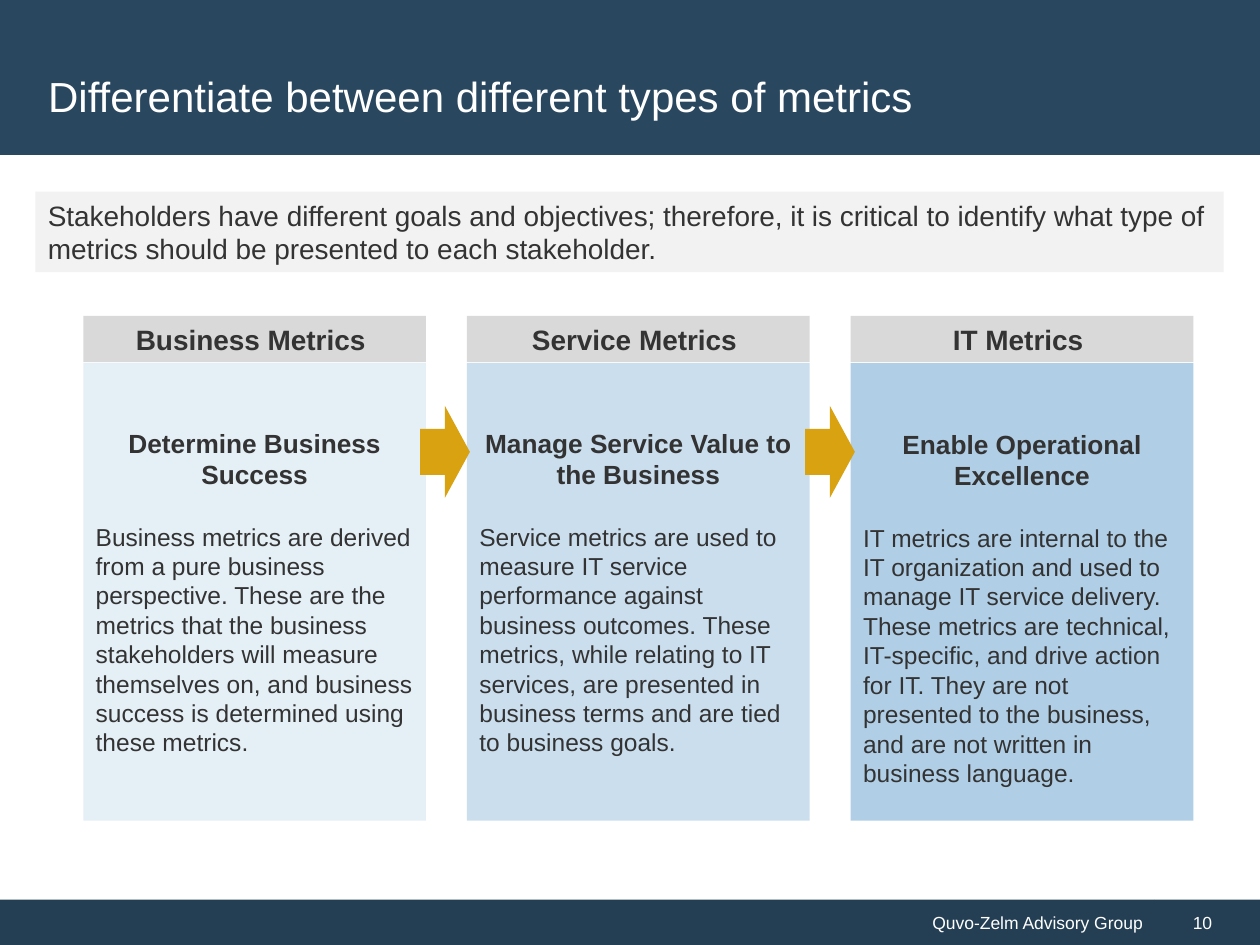
"""Build a slide that tells business, service and IT metrics apart."""
from pptx import Presentation
from pptx.dml.color import RGBColor
from pptx.enum import shapes, text
from pptx.util import Pt

NAVY = RGBColor(0x29, 0x47, 0x5F)
DARK_NAVY = RGBColor(0x24, 0x3F, 0x54)
WHITE = RGBColor(0xFF, 0xFF, 0xFF)
INK = RGBColor(0x33, 0x33, 0x33)
GOLD = RGBColor(0xD9, 0xA2, 0x10)
PALE_GREY = RGBColor(0xF2, 0xF2, 0xF2)
GREY = RGBColor(0xD9, 0xD9, 0xD9)
ICE_BLUE = RGBColor(0xE5, 0xEF, 0xF6)
LIGHT_BLUE = RGBColor(0xCB, 0xDE, 0xEE)
SKY_BLUE = RGBColor(0xB0, 0xCE, 0xE5)

LEFT, ALIGN_CENTER, RIGHT = text.PP_ALIGN.LEFT, text.PP_ALIGN.CENTER, text.PP_ALIGN.RIGHT
RECTANGLE, ARROW = shapes.MSO_SHAPE.RECTANGLE, shapes.MSO_SHAPE.RIGHT_ARROW

COLUMNS = [
    ("Business Metrics ", ICE_BLUE, 3.6, "Determine Business Success",
     "Business metrics are derived from a pure business perspective. These are the metrics "
     "that the business stakeholders will measure themselves on, and business success is "
     "determined using these metrics."),
    ("Service Metrics ", LIGHT_BLUE, 3.6, "Manage Service Value to the Business",
     "Service metrics are used to measure IT service performance against business outcomes. "
     "These metrics, while relating to IT services, are presented in business terms and are "
     "tied to business goals."),
    ("IT Metrics ", SKY_BLUE, 21.6, "Enable Operational Excellence",
     "IT metrics are internal to the IT organization and used to manage IT service delivery. "
     "These metrics are technical, IT-specific, and drive action for IT. They are not presented "
     "to the business, and are not written in business language."),
]
CARD_LEFT, CARD_WIDTH, CARD_PITCH = 47.6, 195.8, 219.25


def add_block(left, top, width, height, fill, kind=RECTANGLE):
    block = slide.shapes.add_shape(kind, Pt(left), Pt(top), Pt(width), Pt(height))
    block.fill.solid()
    block.fill.fore_color.rgb = fill
    block.line.fill.background()
    block.shadow.inherit = False
    block.text_frame.word_wrap = True
    block.text_frame.vertical_anchor = text.MSO_ANCHOR.MIDDLE
    return block


def write(paragraph, words, size, color=INK, align=LEFT, bold=False):
    paragraph.text = words
    paragraph.alignment = align
    paragraph.font.name = "Arial"
    paragraph.font.size = Pt(size)
    paragraph.font.bold = bold
    paragraph.font.color.rgb = color


presentation = Presentation()
presentation.slide_width, presentation.slide_height = Pt(720), Pt(540)
slide = presentation.slides.add_slide(presentation.slide_layouts[5])

footer = add_block(0, 514, 660, 26, DARK_NAVY).text_frame
write(footer.paragraphs[0], "Quvo-Zelm Advisory Group", 10, WHITE, RIGHT)
page_number = add_block(660, 514, 60, 26, DARK_NAVY).text_frame
page_number.margin_left = Pt(21.6)
write(page_number.paragraphs[0], "10", 10, WHITE)

title = slide.shapes.title
title.left, title.top, title.width, title.height = Pt(20.3), Pt(20.3), Pt(679), Pt(69)
title.text_frame.vertical_anchor = text.MSO_ANCHOR.MIDDLE
write(title.text_frame.paragraphs[0], "Differentiate between different types of metrics", 24, WHITE)
banner = add_block(0, 0, 720, 88.5, NAVY)
title.element.addprevious(banner.element)

for index, (metric, tint, top_margin, goal, description) in enumerate(COLUMNS):
    left = CARD_LEFT + index * CARD_PITCH
    card = add_block(left, 207.5, CARD_WIDTH, 261.5, tint).text_frame
    card.margin_top = Pt(top_margin)
    write(card.paragraphs[0], goal, 15, align=ALIGN_CENTER, bold=True)
    card.paragraphs[0].space_after = Pt(18)
    write(card.add_paragraph(), description, 14)
    heading = add_block(left, 180.5, CARD_WIDTH, 26.5, GREY).text_frame
    write(heading.paragraphs[0], metric, 16, align=ALIGN_CENTER, bold=True)

for arrow_left in (240, 460):
    add_block(arrow_left, 232, 28.5, 52.5, GOLD, ARROW)

message = add_block(20.3, 109.5, 679, 46, PALE_GREY).text_frame
write(message.paragraphs[0],
      "Stakeholders have different goals and objectives; therefore, it is critical to identify "
      "what type of metrics should be presented to each stakeholder.", 16)

presentation.save("out.pptx")
